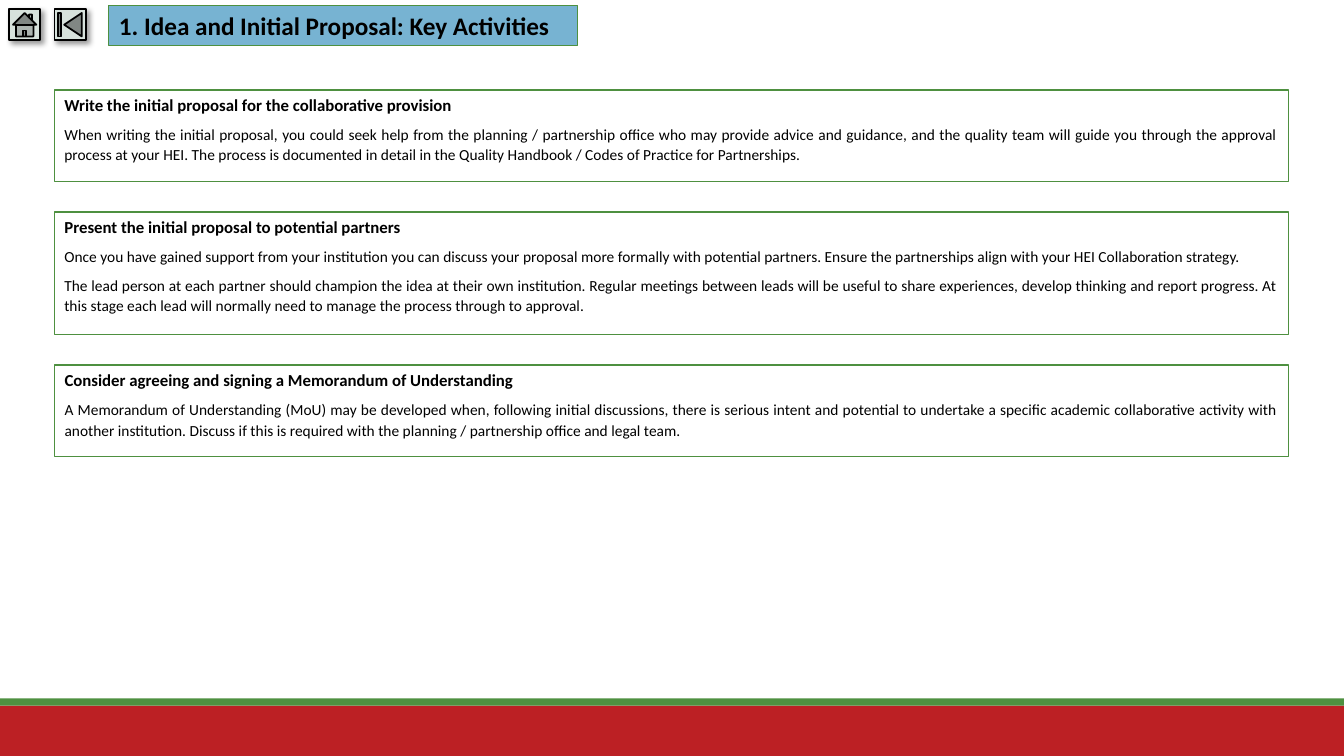
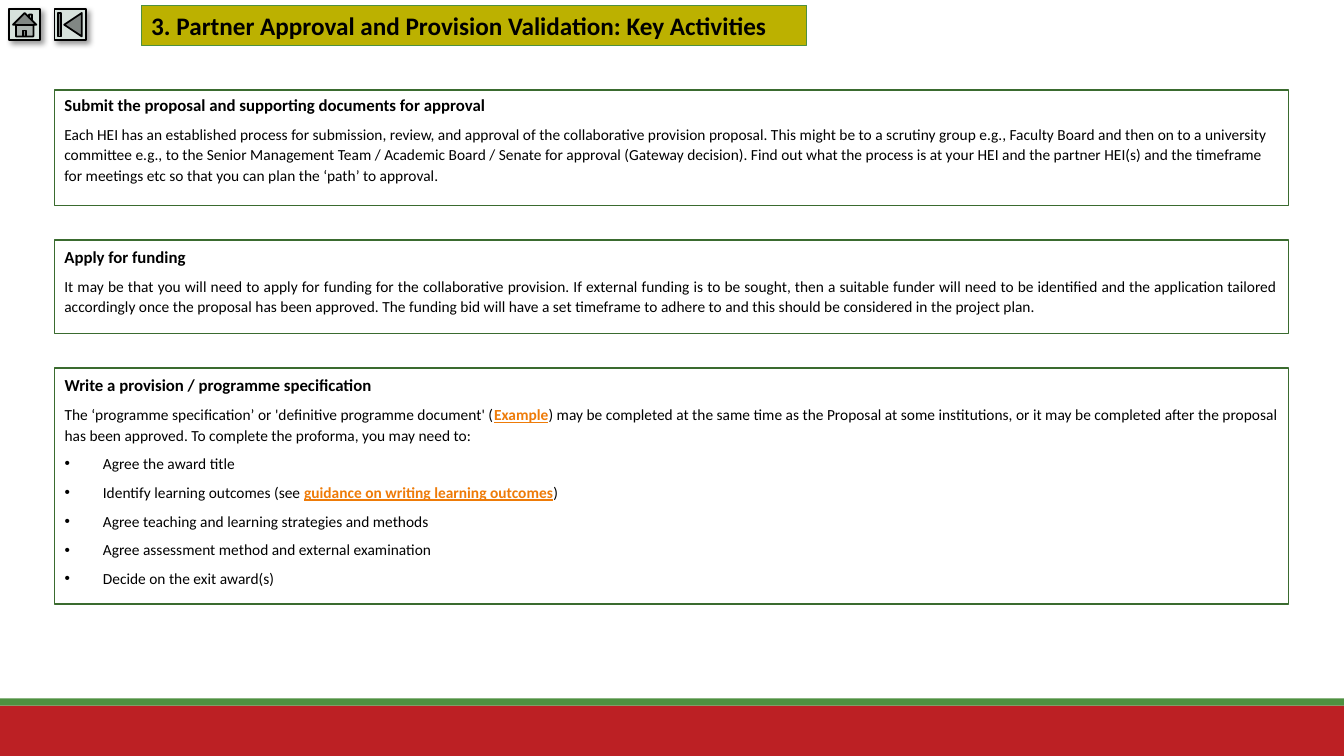
"""Build two key-activity slides with shared bands, navigation buttons and boxes."""
from lxml import etree
from pptx import Presentation
from pptx.dml.color import RGBColor
from pptx.enum.shapes import MSO_SHAPE
from pptx.enum.text import MSO_ANCHOR, MSO_AUTO_SIZE, PP_ALIGN
from pptx.oxml.ns import qn
from pptx.util import Inches, Pt

RECTANGLE = MSO_SHAPE.RECTANGLE
BUTTONS = (MSO_SHAPE.ACTION_BUTTON_HOME, MSO_SHAPE.ACTION_BUTTON_BEGINNING)
TOP, MIDDLE = MSO_ANCHOR.TOP, MSO_ANCHOR.MIDDLE
LEFT, JUSTIFY = PP_ALIGN.LEFT, PP_ALIGN.JUSTIFY
NO_AUTOFIT = MSO_AUTO_SIZE.NONE

BLACK = RGBColor(0x00, 0x00, 0x00)
RED = RGBColor(0xBC, 0x20, 0x24)
GREEN = RGBColor(0x4E, 0x90, 0x40)
DARK_GREEN = RGBColor(0x3A, 0x6B, 0x2F)
BLUE = RGBColor(0x77, 0xB3, 0xD2)
OLIVE = RGBColor(0xBC, 0xB1, 0x00)
PALE = RGBColor(0xD7, 0xE2, 0xDC)
ORANGE = RGBColor(0xEE, 0x7B, 0x08)

FONT = "Calibri"
SLIDE_WIDTH, SLIDE_HEIGHT = 13.33, 7.5
BANDS = [(7, 0.5, RED), (6.93, 0.07, GREEN)]
BUTTON_START, BUTTON_STEP, BUTTON_SIZE = 0.09, 0.45, 0.31
TITLE_TOP, TITLE_HEIGHT = 0.05, 0.4
BOX_LEFT, BOX_TOP, BOX_WIDTH = 0.54, 0.89, 12.24
BULLET_INDENT = 0.38
LINK_MARK = "|"

SLIDES = [
    {
        "title": "1. Idea and Initial Proposal: Key Activities",
        "title_left": 1.08, "title_width": 4.65, "title_fill": BLUE,
        "outline": GREEN, "gap": 0.3,
        "boxes": [
            {
                "heading": "Write the initial proposal for the collaborative provision",
                "height": 0.91,
                "body": [
                    "When writing the initial proposal, you could seek help from the planning / "
                    "partnership office who may provide advice and guidance, and the quality team "
                    "will guide you through the approval process at your HEI. The process is "
                    "documented in detail in the Quality Handbook / Codes of Practice for "
                    "Partnerships.",
                ],
            },
            {
                "heading": "Present the initial proposal to potential partners",
                "height": 1.22,
                "body": [
                    "Once you have gained support from your institution you can discuss your "
                    "proposal more formally with potential partners. Ensure the partnerships "
                    "align with your HEI Collaboration strategy.",
                    "The lead person at each partner should champion the idea at their own "
                    "institution. Regular meetings between leads will be useful to share "
                    "experiences, develop thinking and report progress. At this stage each lead "
                    "will normally need to manage the process through to approval.",
                ],
            },
            {
                "heading": "Consider agreeing and signing a Memorandum of Understanding",
                "height": 0.91,
                "body": [
                    "A Memorandum of Understanding (MoU) may be developed when, following initial "
                    "discussions, there is serious intent and potential to undertake a specific "
                    "academic collaborative activity with another institution. Discuss if this is "
                    "required with the planning / partnership office and legal team.",
                ],
            },
        ],
    },
    {
        "title": "3. Partner Approval and Provision Validation: Key Activities",
        "title_left": 1.4, "title_width": 6.6, "title_fill": OLIVE,
        "outline": DARK_GREEN, "gap": 0.34,
        "boxes": [
            {
                "heading": "Submit the proposal and supporting documents for approval",
                "height": 1.15, "align": LEFT,
                "body": [
                    "Each HEI has an established process for submission, review, and approval of "
                    "the collaborative provision proposal. This might be to a scrutiny group e.g., "
                    "Faculty Board and then on to a university committee e.g., to the Senior "
                    "Management Team / Academic Board / Senate for approval (Gateway decision). "
                    "Find out what the process is at your HEI and the partner HEI(s) and the "
                    "timeframe for meetings etc so that you can plan the ‘path’ to approval.",
                ],
            },
            {
                "heading": "Apply for funding",
                "height": 0.93, "heading_spacing": 1.1,
                "body": [
                    "It may be that you will need to apply for funding for the collaborative "
                    "provision. If external funding is to be sought, then a suitable funder will "
                    "need to be identified and the application tailored accordingly once the "
                    "proposal has been approved. The funding bid will have a set timeframe to "
                    "adhere to and this should be considered in the project plan.",
                ],
            },
            {
                "heading": "Write a provision / programme specification",
                "height": 2.34, "heading_spacing": 1.1,
                "body": [
                    "The ‘programme specification’ or 'definitive programme document' (|Example|) "
                    "may be completed at the same time as the Proposal at some institutions, or it "
                    "may be completed after the proposal has been approved. To complete the "
                    "proforma, you may need to:",
                ],
                "bullets": [
                    "Agree the award title",
                    "Identify learning outcomes (see |guidance on writing learning outcomes|)",
                    "Agree teaching and learning strategies and methods",
                    "Agree assessment method and external examination",
                    "Decide on the exit award(s)",
                ],
            },
        ],
    },
]


def place(shape, left, top, width, height):
    """Position a shape, in inches."""
    shape.left, shape.top = Inches(left), Inches(top)
    shape.width, shape.height = Inches(width), Inches(height)


def set_outline(shape, color, width):
    """Give a shape a solid outline."""
    shape.line.color.rgb = color
    shape.line.width = Pt(width)


def add_filled_shape(slide, kind, left, top, width, height, fill):
    """Add a flat preset shape without an outline."""
    shape = slide.shapes.add_shape(
        kind, Inches(left), Inches(top), Inches(width), Inches(height))
    shape.fill.solid()
    shape.fill.fore_color.rgb = fill
    shape.line.fill.background()
    shape.shadow.inherit = False
    return shape


def add_shadow(shape):
    """Add a soft diagonal shadow to a flat shape."""
    effects = shape.element.spPr.find(qn("a:effectLst"))
    shadow = etree.SubElement(
        effects, qn("a:outerShdw"), blurRad=str(Pt(4)), dist=str(Pt(3)),
        dir=str(45 * 60000), algn="tl", rotWithShape="0")
    color = etree.SubElement(shadow, qn("a:srgbClr"), val=str(BLACK))
    etree.SubElement(color, qn("a:alpha"), val="40000")


def prepare_frame(shape, anchor):
    """Return a wrapping text frame with fixed size."""
    frame = shape.text_frame
    frame.word_wrap = True
    frame.auto_size = NO_AUTOFIT
    frame.vertical_anchor = anchor
    return frame


def write(frame, text, size=11, bold=False, align=LEFT, spacing=1.1, before=0, after=6,
          bullet=False):
    """Write one paragraph; text between link marks is shown as a link."""
    paragraph = frame.paragraphs[0]
    if paragraph.runs:
        paragraph = frame.add_paragraph()
    paragraph.alignment = align
    paragraph.line_spacing = spacing
    paragraph.space_before, paragraph.space_after = Pt(before), Pt(after)
    properties = paragraph._p.get_or_add_pPr()
    indent = Inches(BULLET_INDENT) if bullet else 0
    properties.set("marL", str(indent))
    properties.set("indent", str(-indent))
    if bullet:
        etree.SubElement(properties, qn("a:buFont"), typeface="Arial")
        etree.SubElement(properties, qn("a:buChar"), char="•")
    else:
        etree.SubElement(properties, qn("a:buNone"))
    for index, part in enumerate(text.split(LINK_MARK)):
        is_link = index % 2 == 1
        run = paragraph.add_run()
        run.text = part
        run.font.name, run.font.size = FONT, Pt(size)
        run.font.bold = bold or is_link
        run.font.underline = is_link
        run.font.color.rgb = ORANGE if is_link else BLACK


def add_bands(slide):
    """Draw the bottom bands and move them to the slide's layout."""
    for top, height, fill in BANDS:
        band = add_filled_shape(slide, RECTANGLE, 0, top, SLIDE_WIDTH, height, fill)
        slide.slide_layout.shapes.element.append(band.element)


def add_buttons(slide):
    """Add the navigation buttons."""
    for index, kind in enumerate(BUTTONS):
        button = add_filled_shape(
            slide, kind, BUTTON_START + index * BUTTON_STEP, BUTTON_START,
            BUTTON_SIZE, BUTTON_SIZE, PALE)
        set_outline(button, BLACK, 1.25)
        add_shadow(button)


def fill_title(slide, content):
    """Format the title placeholder as a coloured label."""
    title = slide.shapes.title
    place(title, content["title_left"], TITLE_TOP, content["title_width"], TITLE_HEIGHT)
    title.fill.solid()
    title.fill.fore_color.rgb = content["title_fill"]
    set_outline(title, GREEN, 0.75)
    write(prepare_frame(title, MIDDLE), content["title"], size=18, bold=True, spacing=1, after=0)


def fill_boxes(slide, content):
    """Stack the outlined boxes; the last one is the body placeholder."""
    boxes = content["boxes"]
    top = BOX_TOP
    for box in boxes:
        if box is boxes[-1]:
            shape = slide.placeholders[1]
        else:
            shape = slide.shapes.add_textbox(0, 0, 0, 0)
        place(shape, BOX_LEFT, top, BOX_WIDTH, box["height"])
        set_outline(shape, content["outline"], 1.25)
        frame = prepare_frame(shape, TOP)
        write(frame, box["heading"], size=12, bold=True, spacing=box.get("heading_spacing", 1))
        for text in box["body"]:
            write(frame, text, align=box.get("align", JUSTIFY))
        for text in box.get("bullets", []):
            write(frame, text, bullet=True)
        top += box["height"] + content["gap"]


def main():
    """Create and save the presentation."""
    presentation = Presentation()
    presentation.slide_width = Inches(SLIDE_WIDTH)
    presentation.slide_height = Inches(SLIDE_HEIGHT)
    layout = presentation.slide_layouts[1]
    for index, content in enumerate(SLIDES):
        slide = presentation.slides.add_slide(layout)
        if index == 0:
            add_bands(slide)
        add_buttons(slide)
        fill_title(slide, content)
        fill_boxes(slide, content)
    presentation.save("out.pptx")


if __name__ == "__main__":
    main()
